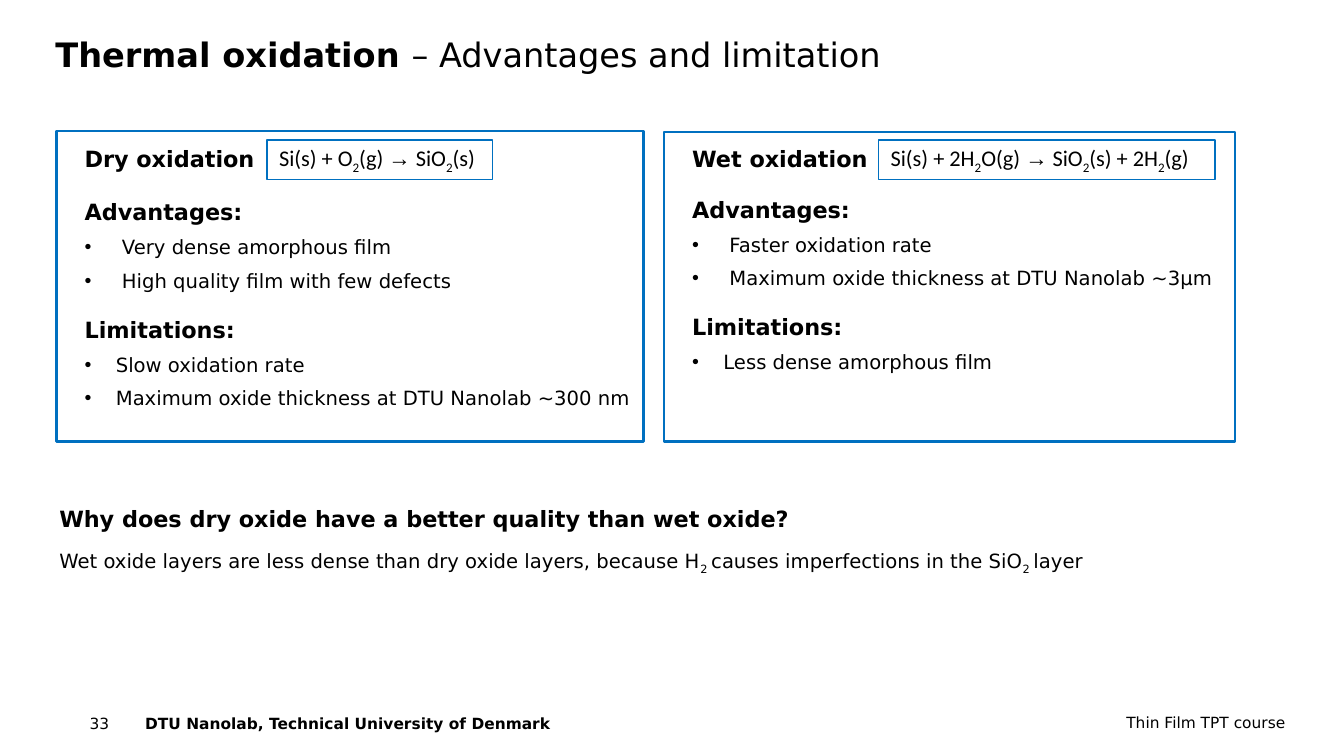
from lxml.etree import SubElement
from pptx import Presentation
from pptx.dml.color import RGBColor
from pptx.enum.shapes import MSO_SHAPE as Shape
from pptx.enum.text import PP_ALIGN as Align
from pptx.oxml.ns import qn
from pptx.util import Inches, Pt

BLACK, BLUE = "000000", "0070C0"
BODY_FONT, FORMULA_FONT, ARROW_FONT = "DejaVu Sans", "Calibri", "Arial"
ARROW = "→"
PANEL_INSETS = (0.12, 0.06)


def color(value):
    """Turn a hex string into a colour."""
    return RGBColor.from_string(value)


def style(font, size, bold=False, name=BODY_FONT):
    """Set size, weight, typeface and colour of a font."""
    font.size, font.bold, font.name = Pt(size), bold, name
    font.color.rgb = color(BLACK)


def set_insets(frame, side=0, edge=0):
    """Wrap a text frame and set its inner margins."""
    frame.word_wrap = True
    frame.margin_left = frame.margin_right = Inches(side)
    frame.margin_top = frame.margin_bottom = Inches(edge)


def add_frame(slide, box, insets=(0, 0)):
    """Add a text box and return its text frame."""
    frame = slide.shapes.add_textbox(*map(Inches, box)).text_frame
    set_insets(frame, *insets)
    return frame


def add_outline(slide, box, width):
    """Add an unfilled blue rectangle."""
    outline = slide.shapes.add_shape(Shape.RECTANGLE, *map(Inches, box))
    outline.shadow.inherit = False
    outline.fill.background()
    outline.line.color.rgb = color(BLUE)
    outline.line.width = Pt(width)
    return outline


def add_chemistry(paragraph, text):
    """Add runs, lowering the parts enclosed in underscores."""
    for index, part in enumerate(text.split("_")):
        before, arrow, after = part.partition(ARROW)
        for piece in filter(None, (before, arrow, after)):
            run = paragraph.add_run()
            run.text = piece
            if piece == ARROW:
                run.font.name = ARROW_FONT
            if index % 2:
                run.font._element.set("baseline", "-25000")


def add_bullet(paragraph, indent):
    """Give a paragraph a round bullet with a hanging indent."""
    properties = paragraph._p.get_or_add_pPr()
    properties.set("marL", str(Inches(indent)))
    properties.set("indent", str(-Inches(indent)))
    SubElement(properties, qn("a:buFont"), typeface="Arial")
    SubElement(properties, qn("a:buChar"), char="•")


def add_line(frame, text, size, bold=False, gap=0, indent=0):
    """Append a paragraph, starting with the empty first one."""
    first = frame.paragraphs[0]
    paragraph = frame.add_paragraph() if first.runs else first
    if gap:
        paragraph.space_before = Pt(gap)
    if indent:
        add_bullet(paragraph, indent)
    style(paragraph.font, size, bold)
    add_chemistry(paragraph, text)
    return paragraph


def add_title(slide, box, topic, subtitle):
    """Write the slide title with a bold topic."""
    title = add_line(add_frame(slide, box), "", 24)
    for text, bold in ((topic, True), (subtitle, False)):
        run = title.add_run()
        run.text, run.font.bold = text, bold


def add_formula(slide, box, reaction):
    """Write a reaction in a framed box."""
    frame = add_outline(slide, box, 1.25).text_frame
    set_insets(frame, *PANEL_INSETS)
    paragraph = frame.paragraphs[0]
    paragraph.alignment = Align.LEFT
    style(paragraph.font, 16, name=FORMULA_FONT)
    add_chemistry(paragraph, reaction)


def add_panel(slide, box, heading, heading_gap, advantages, limitations, reaction, reaction_span):
    """Draw one oxidation panel with its lists and reaction."""
    left, top, width, height = box
    add_outline(slide, box, 1.75)
    frame = add_frame(slide, (left + 0.16, 1.38, width - 0.16, height - 0.1), PANEL_INSETS)
    add_line(frame, heading, 16, True)
    sections = (("Advantages:", advantages, heading_gap, 0.37),
                ("Limitations:", limitations, 17, 0.31))
    for label, points, gap, indent in sections:
        add_line(frame, label, 16, True, gap)
        for point in points:
            add_line(frame, point, 14, gap=7, indent=indent)
    offset, reaction_width = reaction_span
    add_formula(slide, (left + offset, 1.39, reaction_width, 0.39), reaction)


def add_question(slide, box, question, answer):
    """Write the question and its answer."""
    frame = add_frame(slide, box, (0.1, 0.05))
    add_line(frame, question, 16, True)
    add_line(frame, answer, 14, gap=12)


def add_footer(slide, box):
    """Write page number, institute and course along the bottom."""
    left, top, width, height = box
    add_line(add_frame(slide, (left, top, 0.44, height)), "33", 11)
    institute = add_frame(slide, (left + 0.55, top, 5.39, height))
    add_line(institute, "DTU Nanolab, Technical University of Denmark", 11, True)
    course = add_frame(slide, (left + width - 2.52, top - 0.01, 2.52, height))
    add_line(course, "Thin Film TPT course", 11).alignment = Align.RIGHT


def main():
    """Build and save the slide."""
    deck = Presentation()
    deck.slide_width, deck.slide_height = Inches(13.34), Inches(7.5)
    slide = deck.slides.add_slide(deck.slide_layouts[6])
    add_title(slide, (0.55, 0.34, 11.47, 0.5),
              "Thermal oxidation ", "– Advantages and limitation")
    add_panel(slide, (0.56, 1.3, 5.83, 3.08), "Dry oxidation", 19,
              ("Very dense amorphous film", "High quality film with few defects"),
              ("Slow oxidation rate", "Maximum oxide thickness at DTU Nanolab ~300 nm"),
              "Si(s) + O_2_(g) → SiO_2_(s)", (2.09, 2.24))
    add_panel(slide, (6.59, 1.31, 5.67, 3.07), "Wet oxidation", 17,
              ("Faster oxidation rate", "Maximum oxide thickness at DTU Nanolab ~3µm"),
              ("Less dense amorphous film",),
              "Si(s) + 2H_2_O(g) → SiO_2_(s) + 2H_2_(g)", (2.13, 3.34))
    add_question(slide, (0.49, 4.96, 11.3, 1.25),
                 "Why does dry oxide have a better quality than wet oxide?",
                 "Wet oxide layers are less dense than dry oxide layers, because "
                 "H_2 _causes imperfections in the SiO_2 _layer")
    add_footer(slide, (0.89, 7.08, 11.87, 0.33))
    deck.save("out.pptx")


if __name__ == "__main__":
    main()
